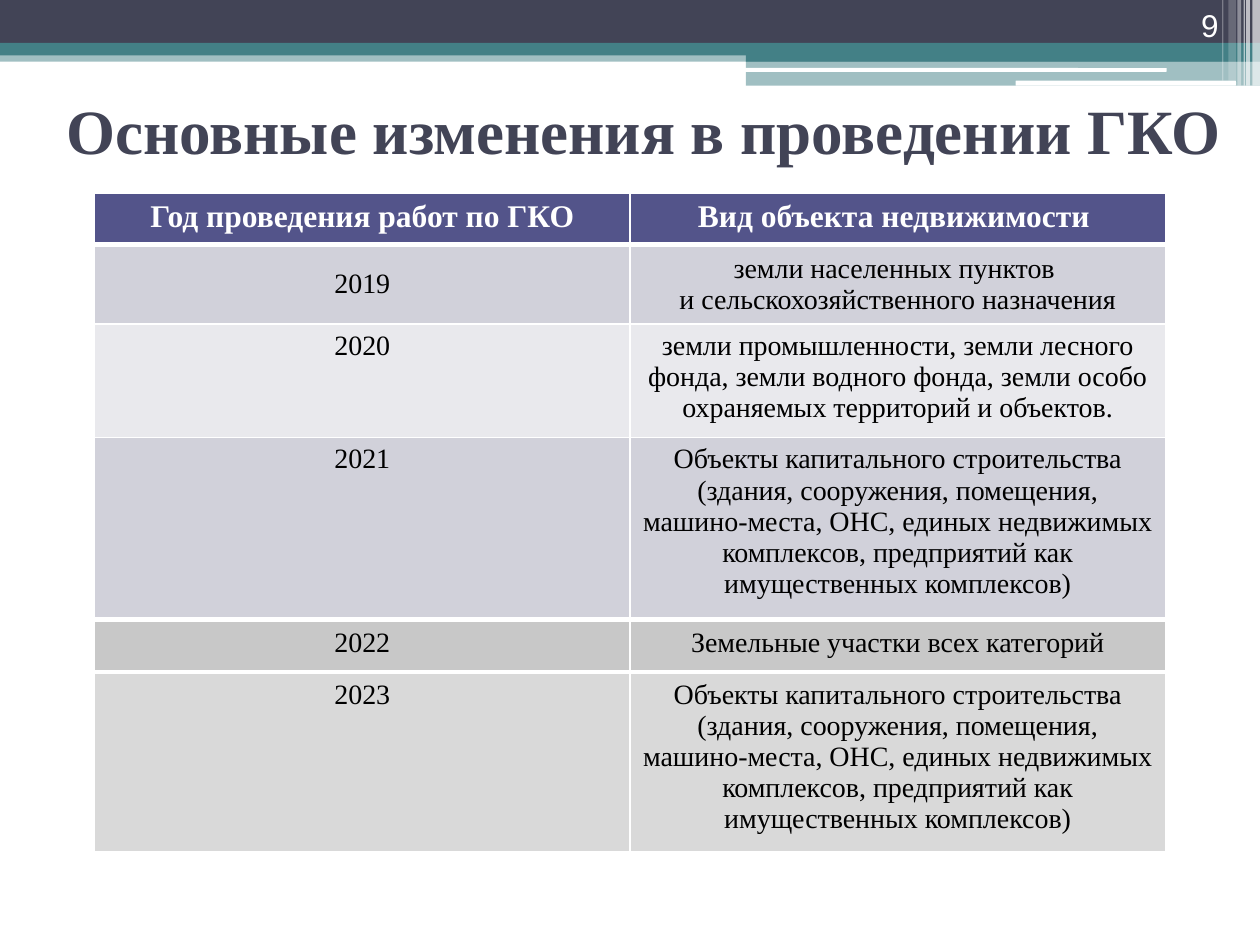
from lxml.etree import SubElement
from pptx import Presentation
from pptx.dml.color import RGBColor
from pptx.enum.shapes import MSO_SHAPE
from pptx.enum.text import MSO_ANCHOR, PP_ALIGN
from pptx.oxml.ns import qn
from pptx.util import Inches, Pt

COLORS = {
    "dark": "424456", "teal": "438086", "white": "FFFFFF", "black": "000000",
    "head": "53548A", "band": "D1D1DA", "pale": "E9E9ED",
    "gray": "C8C8C8", "light": "D9D9D9",
}
SERIF = "Times New Roman"
BUILDINGS = (
    "Объекты капитального строительства (здания, сооружения, помещения, "
    "машино-места, ОНС, единых недвижимых комплексов, предприятий как "
    "имущественных комплексов)"
)


class Deck:
    """Holds the style and the current slide and draws each kind of element."""

    def __init__(self):
        self.prs = Presentation()
        self.prs.slide_width, self.prs.slide_height = Inches(10), Inches(7.5)
        self.slide = self.prs.slides.add_slide(self.prs.slide_layouts[6])
        self.shapes = self.slide.shapes

    def paint(self, fill, color):
        fill.solid()
        fill.fore_color.rgb = RGBColor.from_string(COLORS[color])

    def style(self, par, size, color, face=SERIF, bold=False):
        font = par.font
        font.size, font.name, font.bold = Pt(size), face, bold
        font.color.rgb = RGBColor.from_string(COLORS[color])

    def bar(self, box, color, alpha=100, kind=MSO_SHAPE.RECTANGLE):
        shape = self.shapes.add_shape(kind, *map(Inches, box))
        shape.shadow.inherit = False
        shape.line.fill.background()
        self.paint(shape.fill, color)
        if alpha < 100:
            tint = shape.fill._xPr.find(".//" + qn("a:srgbClr"))
            SubElement(tint, qn("a:alpha"), val=str(alpha * 1000))

    def text(self, box, words, anchor, align, *look):
        frame = self.shapes.add_textbox(*map(Inches, box)).text_frame
        frame.word_wrap, frame.vertical_anchor = True, anchor
        par = frame.paragraphs[0]
        par.text, par.alignment = words, align
        self.style(par, *look)

    def border(self, cell, base):
        for side in "LRTB":
            width = base if side == "B" else 1
            line = SubElement(cell._tc.get_or_add_tcPr(), qn("a:ln" + side), w=str(Pt(width)))
            fill = SubElement(line, qn("a:solidFill"))
            SubElement(fill, qn("a:srgbClr"), val=COLORS["white"])

    def table(self, top, height, rows):
        frame = self.shapes.add_table(
            len(rows), 2, Inches(0.75), Inches(top), Inches(8.5), Inches(height))
        grid = frame.table
        for r, (words, fill, base, anchor) in enumerate(rows):
            grid.rows[r].height = Inches(0.41)
            for c, word in enumerate(words):
                cell = grid.cell(r, c)
                cell.vertical_anchor = anchor
                self.border(cell, base)
                self.paint(cell.fill, fill)
                par = cell.text_frame.paragraphs[0]
                par.text, par.alignment = word, PP_ALIGN.CENTER
                if fill == "head":
                    self.style(par, 18, "white", bold=True)
                else:
                    self.style(par, 16, "black")
        frame.height = Inches(height)


def main():
    deck = Deck()
    for box, color, alpha in [
        ((0, 0.4, 10, 0.09), "teal", 50),
        ((0, 0, 10, 0.34), "dark", 100),
        ((0, 0.34, 10, 0.1), "teal", 100),
        ((5.92, 0.39, 4.08, 0.1), "teal", 100),
        ((5.92, 0.48, 4.08, 0.2), "teal", 50),
    ]:
        deck.bar(box, color, alpha)
    for box in [(5.91, 0.54, 3.35, 0.03), (8.06, 0.64, 1.75, 0.04)]:
        deck.bar(box, "white", kind=MSO_SHAPE.ROUNDED_RECTANGLE)
    for left, width, height, alpha in [
        (9.94, 0.06, 0.68, 65), (9.89, 0.03, 0.68, 65), (9.87, 0.01, 0.68, 60),
        (9.82, 0.03, 0.68, 40), (9.75, 0.06, 0.64, 20), (9.7, 0.01, 0.64, 30),
    ]:
        deck.bar((left, 0, width, height), "white", alpha)

    top, mid = MSO_ANCHOR.TOP, MSO_ANCHOR.MIDDLE
    deck.text((0.43, 0.44, 9.39, 1.17), "Основные изменения в проведении ГКО",
              mid, PP_ALIGN.LEFT, 36, "dark", SERIF, True)
    deck.text((8.94, 0, 0.83, 0.4), "9", MSO_ANCHOR.BOTTOM, PP_ALIGN.RIGHT,
              18, "white", "Arial")
    deck.table(1.53, 3.37, [
        (("Год проведения работ по ГКО", "Вид объекта недвижимости "), "head", 3, top),
        (("2019", "земли населенных пунктов \vи сельскохозяйственного назначения"),
         "band", 1, mid),
        (("2020", "земли промышленности, земли лесного фонда, земли водного фонда, "
          "земли особо охраняемых территорий и объектов."), "pale", 1, top),
        (("2021", BUILDINGS), "band", 1, top),
    ])
    deck.table(4.93, 0.41, [(("2022", "Земельные участки всех категорий"), "gray", 3, top)])
    deck.table(5.34, 1.43, [(("2023", BUILDINGS), "light", 3, top)])
    deck.prs.save("out.pptx")


if __name__ == "__main__":
    main()
